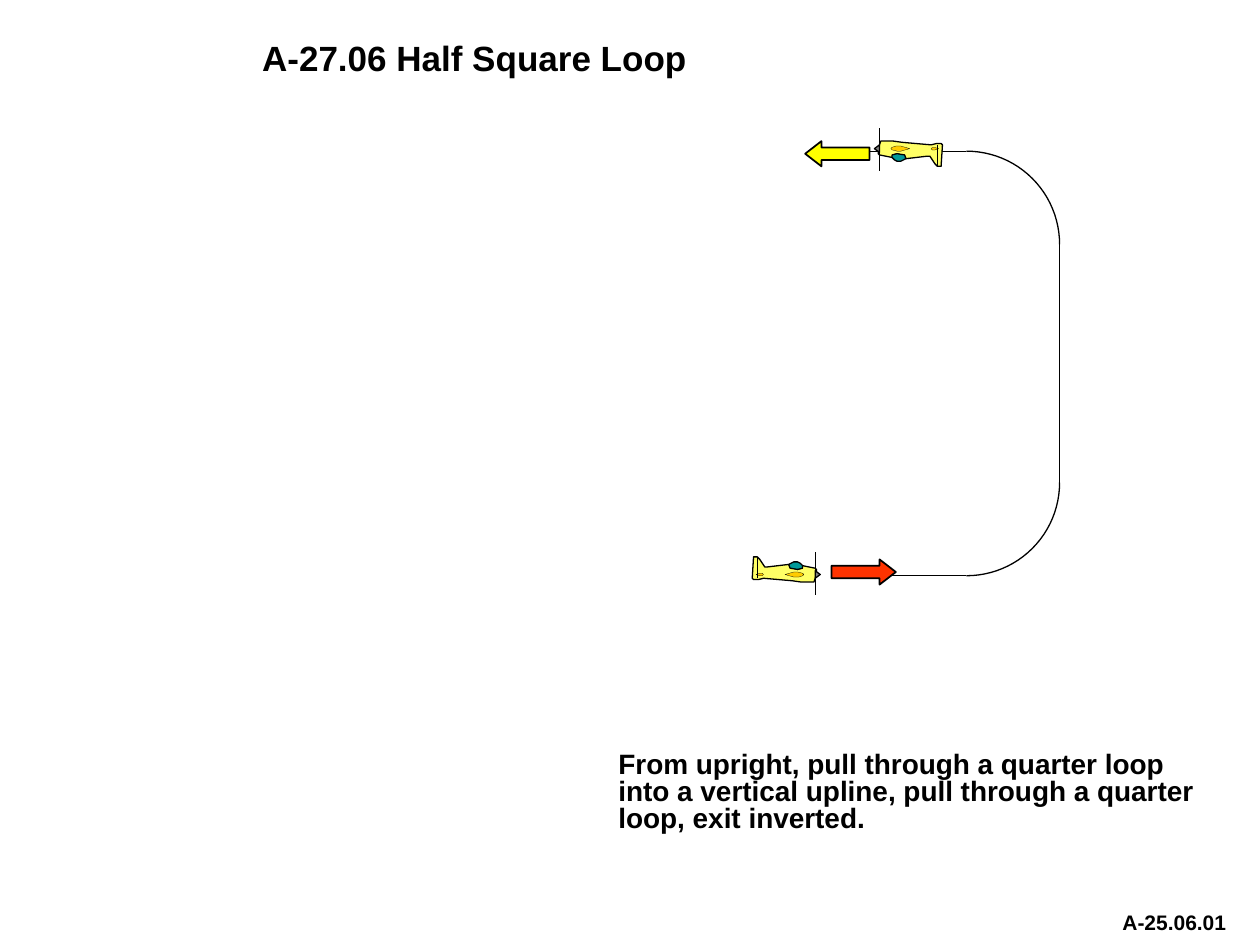
import math

from lxml import etree
from pptx import Presentation
from pptx import util as u
from pptx.dml.color import RGBColor
from pptx.enum import shapes, text
from pptx.oxml.ns import qn

COLORS = {
    "ink": "000000",
    "paper": "FFFFFF",
    "fuselage": "FFFF66",
    "canopy": "009999",
    "marking": "FFCC00",
    "spinner": "808080",
    "entry": "FF3300",
    "exit": "FFFF00",
}

PLANE_SIZE = (0.55, 0.34)
FUSELAGE = [
    (0.40, 0.11), (0.45, 0.12), (0.50, 0.13), (0.51, 0.14), (0.51, 0.18),
    (0.50, 0.21), (0.49, 0.24), (0.45, 0.24), (0.39, 0.24), (0.32, 0.23),
    (0.09, 0.21), (0.05, 0.22), (0.01, 0.22), (0, 0.21), (0.01, 0.05),
    (0.01, 0.04), (0.04, 0.04), (0.06, 0.06), (0.10, 0.12), (0.12, 0.12),
    (0.29, 0.10), (0.30, 0.12), (0.36, 0.14), (0.39, 0.13),
]
CANOPY = [
    (0.29, 0.10), (0.30, 0.13), (0.36, 0.14), (0.40, 0.13),
    (0.40, 0.11), (0.38, 0.09), (0.36, 0.08), (0.33, 0.08),
]
WING = [
    (0.26, 0.18), (0.33, 0.16), (0.36, 0.16), (0.40, 0.17),
    (0.41, 0.18), (0.40, 0.19), (0.37, 0.20), (0.33, 0.20),
]
TAILPLANE = [
    (0.03, 0.18), (0.06, 0.17), (0.08, 0.17),
    (0.09, 0.18), (0.08, 0.19), (0.06, 0.19),
]


def rgb(name):
    return RGBColor.from_string(COLORS[name])


def style(part, fill=None, width=0.75):
    part.shadow.inherit = False
    if fill:
        part.fill.solid()
        part.fill.fore_color.rgb = rgb(fill)
    else:
        part.fill.background()
    part.line.color.rgb = rgb("ink")
    part.line.width = u.Pt(width)


def add_line(parent, start, end):
    line = parent.add_connector(
        shapes.MSO_CONNECTOR.STRAIGHT, *map(u.Inches, (*start, *end))
    )
    line.line.color.rgb = rgb("ink")
    line.line.width = u.Pt(0.75)
    etree.SubElement(line._element.spPr, qn("a:effectLst"))


def add_outline(parent, points, fill=None, width=0.75, close=True):
    corners = [(u.Inches(x), u.Inches(y)) for x, y in points]
    builder = parent.build_freeform(*corners[0])
    builder.add_line_segments(corners[1:], close=close)
    style(builder.convert_to_shape(), fill, width)


def write(frame, words, size, wrap=True, spacing=None):
    frame.word_wrap = wrap
    frame.auto_size = text.MSO_AUTO_SIZE.SHAPE_TO_FIT_TEXT
    frame.vertical_anchor = text.MSO_ANCHOR.TOP
    paragraph = frame.paragraphs[0]
    paragraph.text = words
    paragraph.alignment = text.PP_ALIGN.LEFT
    paragraph.space_before = u.Pt(0)
    if spacing:
        paragraph.line_spacing = spacing
    for run in paragraph.runs:
        run.font.name = "Arial"
        run.font.size = u.Pt(size)
        run.font.bold = True
        run.font.color.rgb = rgb("ink")


def draw_title(slide, box):
    title = slide.shapes.title
    title.left, title.top, title.width, title.height = map(u.Inches, box)
    write(title.text_frame, "A-27.06 Half Square Loop", size=20)


def draw_description(slide, box):
    description = slide.shapes.add_textbox(*map(u.Inches, box))
    description.fill.solid()
    description.fill.fore_color.rgb = rgb("paper")
    write(
        description.text_frame,
        "From upright, pull through a quarter loop into a vertical upline, "
        "pull through a quarter\nloop, exit inverted.",
        size=16, spacing=0.8,
    )


def draw_figure_number(slide, box):
    number = slide.shapes.add_textbox(*map(u.Inches, box))
    write(number.text_frame, "A-25.06.01", size=12, wrap=False)


def draw_flight_path(slide, box):
    left, top, width, height = box
    right, bottom = left + width, top + height
    radius = 0.74
    bend = right - radius
    steps = 24

    def quarter_loop(center_y, direction):
        angles = [math.pi / 2 * step / steps for step in range(steps + 1)]
        return [
            (bend + radius * math.sin(a), center_y + direction * radius * math.cos(a))
            for a in angles
        ]

    upper, lower = top + radius, bottom - radius
    add_line(slide.shapes, (right, upper), (right, lower))
    add_outline(slide.shapes, quarter_loop(lower, 1), close=False)
    add_line(slide.shapes, (bend, bottom), (left - 0.12, bottom))
    add_outline(slide.shapes, quarter_loop(upper, -1), close=False)
    add_line(slide.shapes, (bend, top), (left, top))


def draw_plane(slide, left, top, inverted=False):
    width, height = PLANE_SIZE
    plane = slide.shapes.add_group_shape().shapes

    def place(x, y):
        return (left + width - x, top + height - y) if inverted else (left + x, top + y)

    def place_all(points):
        return [place(*point) for point in points]

    add_line(plane, place(0.50, 0.34), place(0.50, 0.18))
    add_outline(plane, place_all(FUSELAGE), "fuselage")
    add_outline(plane, place_all(CANOPY), "canopy")
    add_outline(plane, place_all(WING), "marking", 0.13)
    add_outline(plane, place_all(TAILPLANE), "marking", 0.13)
    add_line(plane, place(0.04, 0.21), place(0.04, 0.04))

    center_x, center_y = place(0.52, 0.18)
    spinner = plane.add_shape(
        shapes.MSO_SHAPE.ISOSCELES_TRIANGLE,
        u.Inches(center_x - 0.03), u.Inches(center_y - 0.02),
        u.Inches(0.06), u.Inches(0.04),
    )
    spinner.rotation = 270 if inverted else 90
    style(spinner, "spinner")
    add_line(plane, place(0.50, 0.17), place(0.50, 0))


def draw_direction(slide, box, fill, rotation=0):
    arrow = slide.shapes.add_shape(shapes.MSO_SHAPE.RIGHT_ARROW, *map(u.Inches, box))
    arrow.adjustments[0] = 0.5
    arrow.adjustments[1] = 0.645
    arrow.rotation = rotation
    style(arrow, fill, 1)


def main():
    deck = Presentation()
    deck.slide_width, deck.slide_height = u.Inches(10), u.Inches(7.5)
    slide = deck.slides.add_slide(deck.slide_layouts[5])

    draw_figure_number(slide, (8.81, 7.17, 1.03, 0.3))
    draw_description(slide, (4.81, 5.93, 4.94, 0.75))
    draw_title(slide, (1.98, 0.24, 5.48, 0.44))
    draw_flight_path(slide, (6.77, 1.2, 1.64, 3.37))
    draw_plane(slide, 5.97, 4.38)
    draw_direction(slide, (6.39, 1.12, 0.51, 0.2), "exit", rotation=180)
    draw_direction(slide, (6.6, 4.44, 0.51, 0.2), "entry")
    draw_plane(slide, 6.93, 1.02, inverted=True)

    deck.save("out.pptx")


if __name__ == "__main__":
    main()
